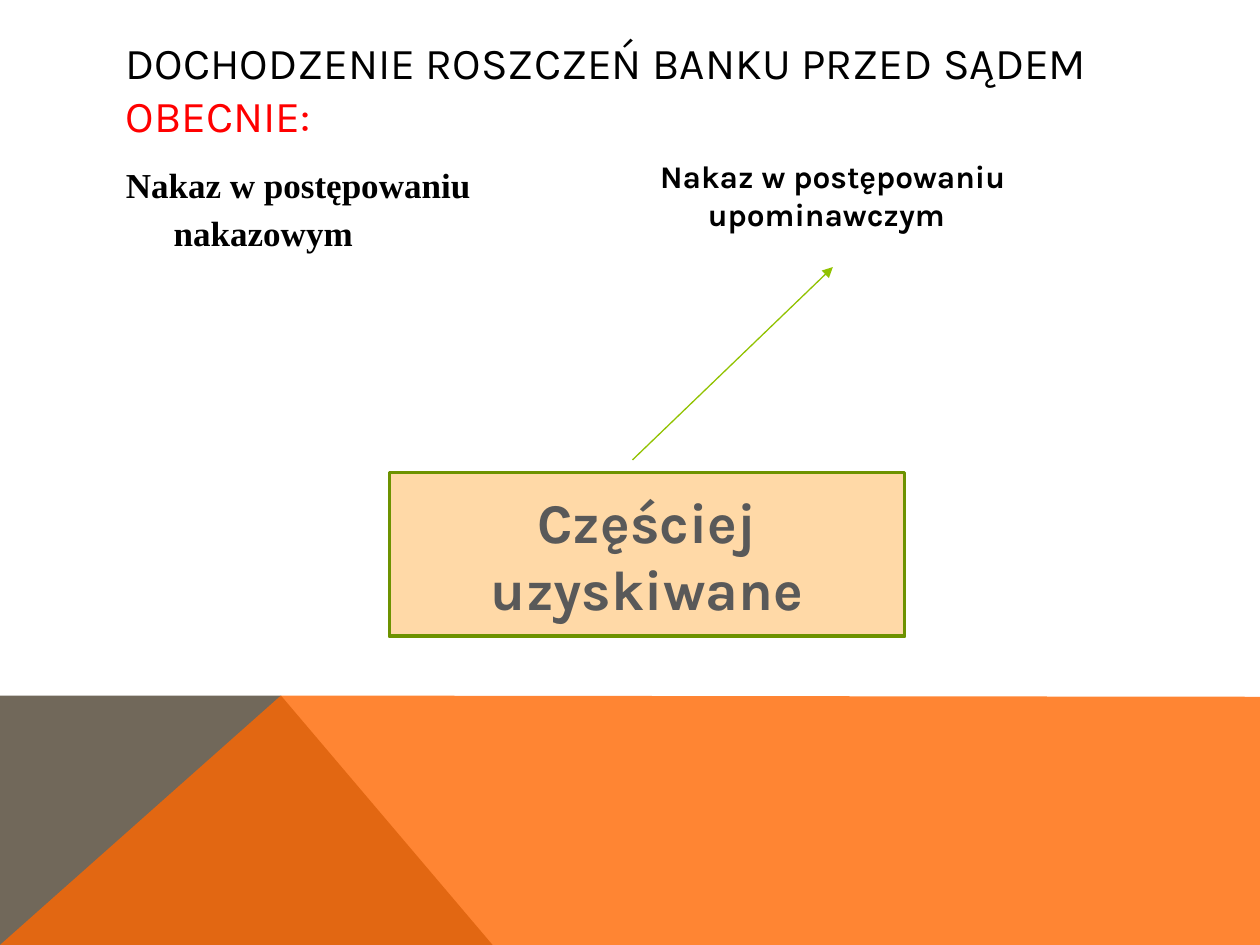
from lxml import etree
from pptx import Presentation
from pptx.dml.color import RGBColor
from pptx.enum.shapes import MSO_CONNECTOR, MSO_SHAPE
from pptx.enum.text import MSO_ANCHOR, PP_ALIGN
from pptx.oxml.ns import qn
from pptx.util import Inches, Pt

RECTANGLE = MSO_SHAPE.RECTANGLE
STRAIGHT = MSO_CONNECTOR.STRAIGHT
MIDDLE, TOP = MSO_ANCHOR.MIDDLE, MSO_ANCHOR.TOP
CENTER = PP_ALIGN.CENTER
SANS, SERIF = "Karla", "Times New Roman"
BLACK = "000000"
HANGING = 0.38


def rgb(value):
    return RGBColor.from_string(value)


def add_run(paragraph, text, size, color, font=SANS, bold=False):
    run = paragraph.add_run()
    run.text = text
    run.font.name = font
    run.font.size = Pt(size)
    run.font.bold = bold
    run.font.color.rgb = rgb(color)


def add_text_box(slide, left, top, width, height, anchor=TOP):
    """Add a wrapping text box and return its first paragraph."""
    box = slide.shapes.add_textbox(
        Inches(left), Inches(top), Inches(width), Inches(height))
    frame = box.text_frame
    frame.word_wrap = True
    frame.vertical_anchor = anchor
    return frame.paragraphs[0]


def add_order(slide, place, text, size, font=SANS, line_spacing=1.0):
    """Add a payment order heading with a hanging indent."""
    paragraph = add_text_box(slide, *place)
    paragraph.space_before = Pt(8)
    paragraph.line_spacing = line_spacing
    properties = paragraph._p.get_or_add_pPr()
    properties.set("marL", str(Inches(HANGING)))
    properties.set("indent", str(-Inches(HANGING)))
    add_run(paragraph, text, size, BLACK, font, bold=True)


def add_polygon(slide, points, color, opacity=100):
    corners = [(Inches(x), Inches(y)) for x, y in points]
    builder = slide.shapes.build_freeform(*corners[0], scale=1.0)
    builder.add_line_segments(corners[1:], close=True)
    polygon = builder.convert_to_shape()
    polygon.shadow.inherit = False
    polygon.fill.solid()
    polygon.fill.fore_color.rgb = rgb(color)
    polygon.line.fill.background()
    if opacity < 100:
        fill_color = polygon._element.spPr.find(".//" + qn("a:srgbClr"))
        etree.SubElement(fill_color, qn("a:alpha"), val=str(opacity * 1000))


def add_callout(slide, left, top, width, height, text):
    callout = slide.shapes.add_shape(
        RECTANGLE, Inches(left), Inches(top), Inches(width), Inches(height))
    callout.shadow.inherit = False
    callout.fill.solid()
    callout.fill.fore_color.rgb = rgb("FFD9A7")
    callout.line.color.rgb = rgb("6D9200")
    callout.line.width = Pt(2)
    frame = callout.text_frame
    frame.word_wrap = True
    frame.vertical_anchor = MIDDLE
    frame.paragraphs[0].alignment = CENTER
    add_run(frame.paragraphs[0], text, 32, "595959", bold=True)


def add_arrow(slide, start, end, color):
    arrow = slide.shapes.add_connector(
        STRAIGHT, *(Inches(value) for value in (*start, *end)))
    arrow.line.color.rgb = rgb(color)
    arrow.line.width = Pt(0.75)
    etree.SubElement(arrow.line._get_or_add_ln(), qn("a:tailEnd"), type="triangle")
    etree.SubElement(arrow._element.spPr, qn("a:effectLst"))


def main():
    deck = Presentation()
    deck.slide_width, deck.slide_height = Inches(10), Inches(7.5)
    slide = deck.slides.add_slide(deck.slide_layouts[6])

    # Footer band: grey triangle beneath a translucent orange field
    peak = (2.23, 5.52)
    add_polygon(slide, [(0, 7.5), (0, 5.52), peak, (3.91, 7.5)], "71685A")
    add_polygon(slide, [(0, 7.5), peak, (10, 5.53), (10, 7.5)], "FF6700", 80)

    # The two kinds of payment order
    add_order(slide, (0.9, 1.2, 3.5, 4.06), "Nakaz w postępowaniu nakazowym",
              20, SERIF, 1.15)
    add_order(slide, (5.14, 1.2, 4.51, 4.06),
              "Nakaz w postępowaniu upominawczym", 18)

    # Title
    title = add_text_box(slide, 0.9, 0.4, 8.22, 0.6, MIDDLE)
    add_run(title, "DOCHODZENIE ROSZCZEŃ BANKU PRZED SĄDEM", 25.2, BLACK)
    title.add_line_break()
    add_run(title, "OBECNIE:", 25.2, "FF0000")

    # Callout pointing at the more frequent order
    add_callout(slide, 3.09, 3.75, 4.09, 1.3, "Częściej uzyskiwane")
    add_arrow(slide, (5.02, 3.65), (6.61, 2.12), "91C200")

    deck.save("out.pptx")


if __name__ == "__main__":
    main()
